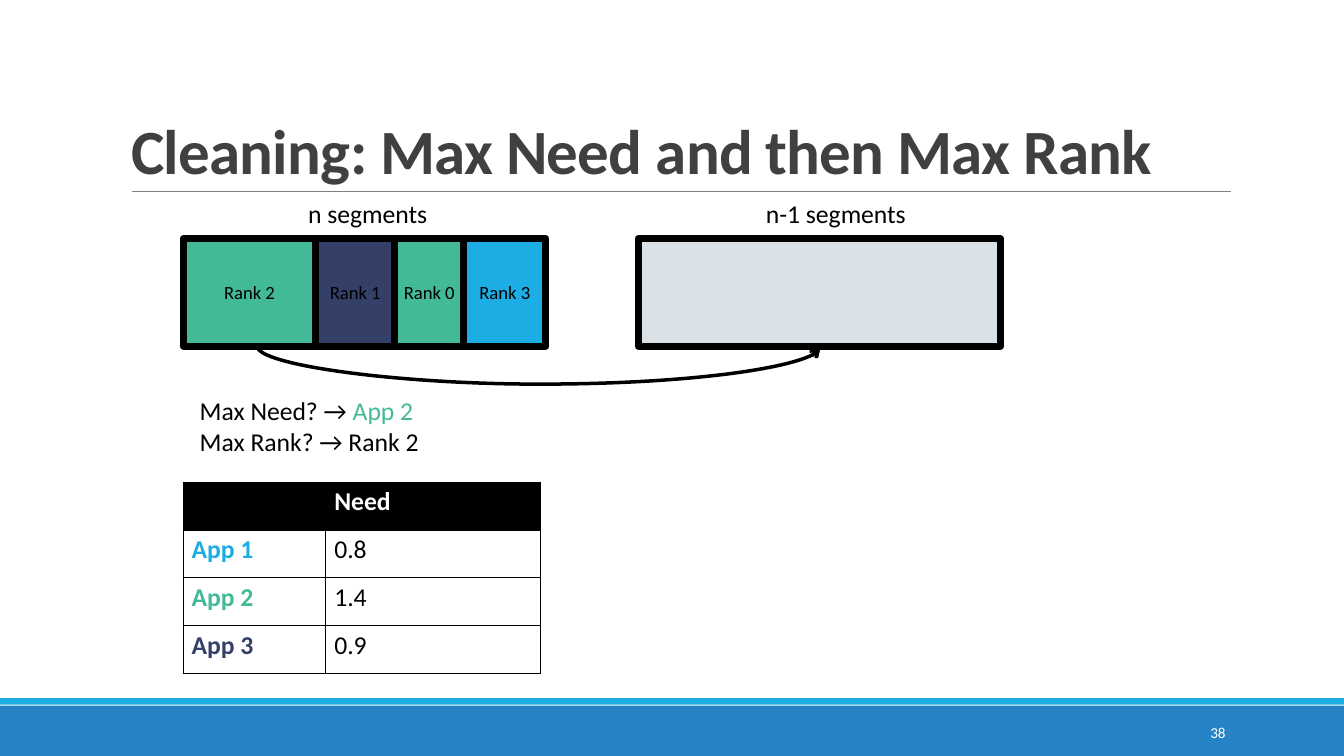
from pptx import Presentation
from pptx.dml.color import RGBColor
from pptx.enum.shapes import MSO_CONNECTOR as Link, MSO_SHAPE as Shape
from pptx.enum.text import MSO_ANCHOR as Anchor, PP_ALIGN as Align
from pptx.oxml.ns import qn
from pptx.util import Inches, Pt
from lxml.etree import SubElement

COLORS = {
    "black": "000000", "white": "FFFFFF", "title": "404040", "rule": "808080",
    "footer": "2683C6", "app1": "1CADE4", "app2": "42BA97", "app3": "344068",
    "free": "D9E0E6",
}
SEGMENTS = [("Rank 2", 1.58, "app2"), ("Rank 1", 0.94, "app3"),
            ("Rank 0", 0.82, "app2"), ("Rank 3", 0.98, "app1")]
NEEDS = [("", "Need"), ("App 1", "0.8"), ("App 2", "1.4"), ("App 3", "0.9")]
SEGMENT_TOP, SEGMENT_HEIGHT = 2.84, 1.28


def color(name):
    """Return the named colour."""
    return RGBColor.from_string(COLORS[name])


def style(font, size, name="black", bold=False):
    """Set typeface, size, colour and weight."""
    font.name, font.size, font.bold = "Calibri", Pt(size), bold
    font.color.rgb = color(name)


def add_block(page, left, top, width, height, fill, border=0, text=""):
    """Add a filled rectangle with an optional border and label."""
    block = page.shapes.add_shape(Shape.RECTANGLE, Inches(left), Inches(top),
                                  Inches(width), Inches(height))
    block.shadow.inherit = False
    block.fill.solid()
    block.fill.fore_color.rgb = color(fill)
    if border:
        block.line.color.rgb = color("black")
        block.line.width = Pt(border)
    else:
        block.line.fill.background()
    if text:
        frame = block.text_frame
        frame.word_wrap = False
        frame.vertical_anchor = Anchor.MIDDLE
        para = frame.paragraphs[0]
        para.text, para.alignment = text, Align.CENTER
        style(para.font, 16)


def add_text(page, left, top, width, height, lines, size, name="black",
             bold=False, anchor=Anchor.TOP, margin=0.1):
    """Add a text box whose lines are lists of (text, colour) spans."""
    box = page.shapes.add_textbox(Inches(left), Inches(top),
                                  Inches(width), Inches(height))
    frame = box.text_frame
    frame.word_wrap = True
    frame.vertical_anchor = anchor
    frame.margin_left = frame.margin_right = Inches(margin)
    for index, line in enumerate(lines):
        para = frame.add_paragraph() if index else frame.paragraphs[0]
        style(para.font, size, name, bold)
        for text, span_color in line:
            span = para.add_run()
            span.text = text
            style(span.font, size, span_color, bold)
    return frame.paragraphs[0]


def add_line(page, kind, start, end, name, width):
    """Add a connector without a shadow."""
    line = page.shapes.add_connector(kind, *map(Inches, start + end))
    line.line.color.rgb = color(name)
    line.line.width = Pt(width)
    SubElement(line._element.spPr, qn("a:effectLst"))
    return line


def add_cleaning_arrow(page):
    """Add the curved arrow that sags between the two segment areas."""
    arrow = add_line(page, Link.CURVE, (6.42, 0.77), (6.41, 7.48), "black", 3)
    properties = arrow._element.spPr
    properties.find(qn("a:xfrm")).set("rot", "16200000")
    geometry = properties.find(qn("a:prstGeom"))
    adjustments = geometry.find(qn("a:avLst"))
    if adjustments is None:
        adjustments = SubElement(geometry, qn("a:avLst"))
    SubElement(adjustments, qn("a:gd"), name="adj1", fmla="val 4600000")
    SubElement(properties.find(qn("a:ln")), qn("a:tailEnd"), type="arrow")


def add_borders(cell):
    """Draw thin black lines on all sides of a cell."""
    properties = cell._tc.get_or_add_tcPr()
    for index, side in enumerate(("a:lnL", "a:lnR", "a:lnT", "a:lnB")):
        border = properties.makeelement(qn(side), {"w": str(Pt(1))})
        fill = SubElement(border, qn("a:solidFill"))
        SubElement(fill, qn("a:srgbClr"), val=COLORS["black"])
        properties.insert(index, border)


def add_need_table(page):
    """Add the table of need per app."""
    table = page.shapes.add_table(len(NEEDS), 2, Inches(2.18), Inches(5.74),
                                  Inches(4.25), Inches(2.28)).table
    for column, width in zip(table.columns, (1.7, 2.55)):
        column.width = Inches(width)
    for row, texts in enumerate(NEEDS):
        for column, text in enumerate(texts):
            cell = table.cell(row, column)
            cell.fill.solid()
            cell.fill.fore_color.rgb = color("white" if row else "black")
            add_borders(cell)
            name = "white" if row == 0 else "black" if column else f"app{row}"
            para = cell.text_frame.paragraphs[0]
            para.text = text
            style(para.font, 22, name, bold=row == 0 or column == 0)


def main():
    """Build the cleaning slide."""
    deck = Presentation()
    deck.slide_width, deck.slide_height = Inches(16), Inches(9)
    page = deck.slides.add_slide(deck.slide_layouts[6])

    add_block(page, 0, 8.4, 16, 0.6, "footer")
    add_block(page, 0, 8.31, 16, 0.08, "app1")
    add_line(page, Link.STRAIGHT, (1.57, 2.28), (14.65, 2.28), "rule", 0.5)
    title = add_text(page, 1.44, 0.38, 13.2, 1.9,
                     [[("Cleaning: Max Need and then Max Rank", "title")]],
                     54, "title", True, Anchor.BOTTOM, 0.12)
    title.line_spacing = 0.85
    title.runs[0].font._element.set("spc", "-60")
    number = add_text(page, 12.99, 8.48, 1.72, 0.48, [[("38", "white")]],
                      13, "white", anchor=Anchor.MIDDLE, margin=0.12)
    number.alignment = Align.RIGHT

    left = 2.18
    for text, width, fill in SEGMENTS:
        add_block(page, left, SEGMENT_TOP, width, SEGMENT_HEIGHT, fill, 6, text)
        left += width
    add_block(page, 7.6, SEGMENT_TOP, 4.31, SEGMENT_HEIGHT, "free", 6)
    for left, text in ((3.57, "n segments"), (9.02, "n-1 segments")):
        add_text(page, left, 2.31, 2.2, 0.47, [[(text, "black")]], 22)

    add_need_table(page)
    add_text(page, 2.28, 4.65, 2.86, 0.84,
             [[("Max Need? → ", "black"), ("App 2", "app2")],
              [("Max Rank? → Rank 2", "black")]], 22)
    add_cleaning_arrow(page)
    deck.save("out.pptx")


if __name__ == "__main__":
    main()
